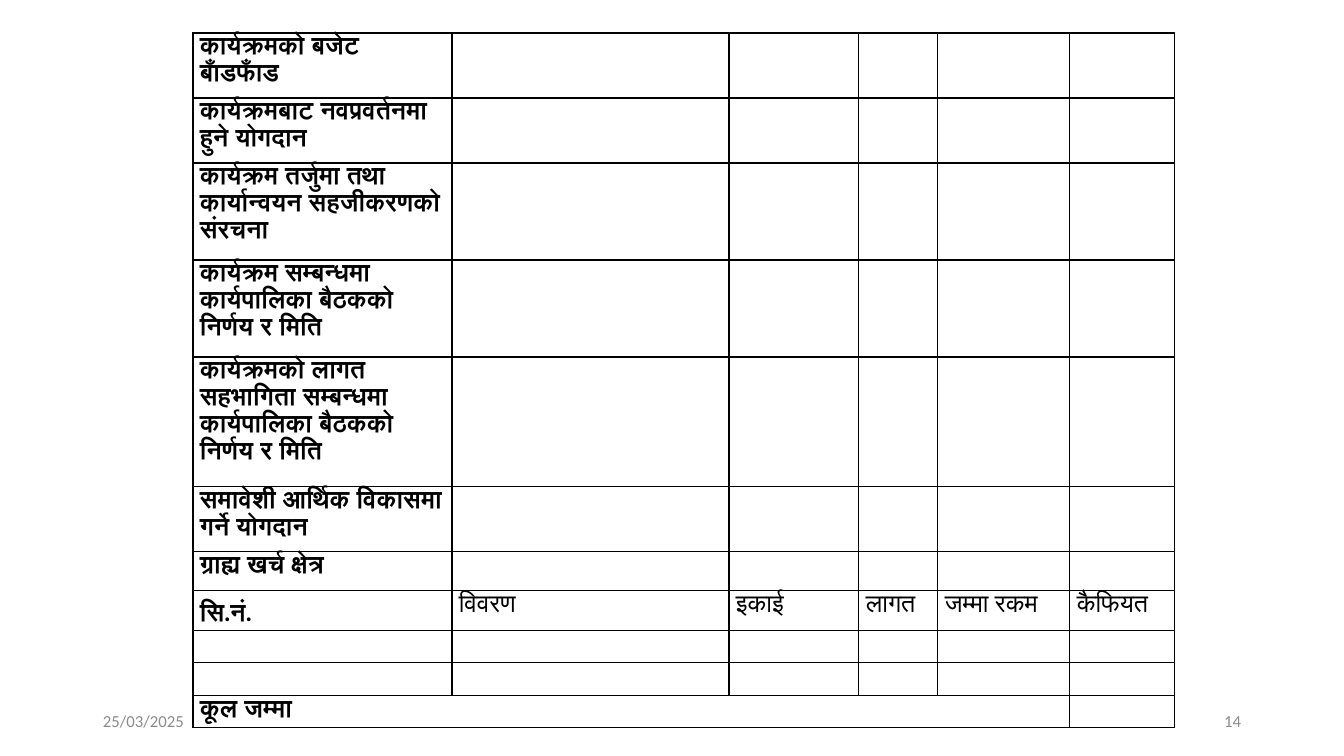
import pptx
import pptx.util
import pptx.dml.color
import pptx.enum.text
import lxml.etree
import pptx.oxml.ns

BLACK = pptx.dml.color.RGBColor(0x00, 0x00, 0x00)
GREY = pptx.dml.color.RGBColor(0x8C, 0x8C, 0x8C)
ALIGN = pptx.enum.text.PP_ALIGN
ANCHOR = pptx.enum.text.MSO_ANCHOR
WIDE, HIGH = 1344, 756
SCALE = 12192000 / WIDE


def px(count):
    return pptx.util.Emu(round(count * SCALE))


def write(frame, text, font="Lato", size=18, color=BLACK, bold=False,
          align=ALIGN.LEFT, space=1.0):
    frame.word_wrap = True
    para = frame.paragraphs[0]
    para.alignment = align
    para.line_spacing = space
    run = para.add_run()
    run.text = text
    run.font.name = font
    run.font.size = pptx.util.Pt(size)
    run.font.bold = bold
    run.font.color.rgb = color


# Slide
deck = pptx.Presentation()
deck.slide_width, deck.slide_height = px(WIDE), px(HIGH)
slide = deck.slides.add_slide(deck.slide_layouts[6])

# Date and page number
for left, text, align in [(93, "25/03/2025", ALIGN.LEFT),
                          (949, "14", ALIGN.RIGHT)]:
    box = slide.shapes.add_textbox(px(left), px(701), px(302), px(40))
    box.text_frame.vertical_anchor = ANCHOR.MIDDLE
    write(box.text_frame, text, font="Calibri", size=12, color=GREY,
          align=align)

# Table content
heads = ["सि.नं.", "विवरण", "इकाई", "लागत", "जम्मा रकम", "कैफियत"]
rows = [
    (65, ["कार्यक्रमको बजेट बाँडफाँड"]),
    (65, ["कार्यक्रमबाट नवप्रवर्तनमा हुने योगदान"]),
    (97, ["कार्यक्रम तर्जुमा तथा कार्यान्वयन सहजीकरणको संरचना"]),
    (97, ["कार्यक्रम सम्बन्धमा कार्यपालिका बैठकको निर्णय र मिति"]),
    (129, ["कार्यक्रमको लागत सहभागिता सम्बन्धमा कार्यपालिका बैठकको निर्णय र मिति"]),
    (65, ["समावेशी आर्थिक विकासमा गर्ने योगदान"]),
    (39, ["ग्राह्य खर्च क्षेत्र"]),
    (40, heads),
    (32, []),
    (33, []),
    (32, ["कूल जम्मा"]),
]
widths = [259, 277, 130, 79, 132, 105]

# Table grid
table = slide.shapes.add_table(
    len(rows), len(widths), px(193), px(33), px(sum(widths)),
    px(sum(high for high, _ in rows))).table
table.first_row = table.horz_banding = False
for col, width in zip(table.columns, widths):
    col.width = px(width)
for row, (high, _) in zip(table.rows, rows):
    row.height = px(high)

# Cell borders and margins
for cell in table.iter_cells():
    cell.margin_left = cell.margin_right = px(7)
    cell.margin_top = cell.margin_bottom = 0
    props = cell._tc.get_or_add_tcPr()
    for side in ("a:lnL", "a:lnR", "a:lnT", "a:lnB"):
        line = lxml.etree.SubElement(props, pptx.oxml.ns.qn(side), w="12700")
        fill = lxml.etree.SubElement(line, pptx.oxml.ns.qn("a:solidFill"))
        lxml.etree.SubElement(fill, pptx.oxml.ns.qn("a:srgbClr"),
                              val=str(BLACK))
    cell.fill.background()

# Cell text
for r, (_, texts) in enumerate(rows):
    for c, text in enumerate(texts):
        write(table.cell(r, c).text_frame, text, bold=c == 0, space=1.07)
table.cell(7, 0).vertical_anchor = ANCHOR.MIDDLE
table.cell(10, 0).merge(table.cell(10, 4))

deck.save("out.pptx")
